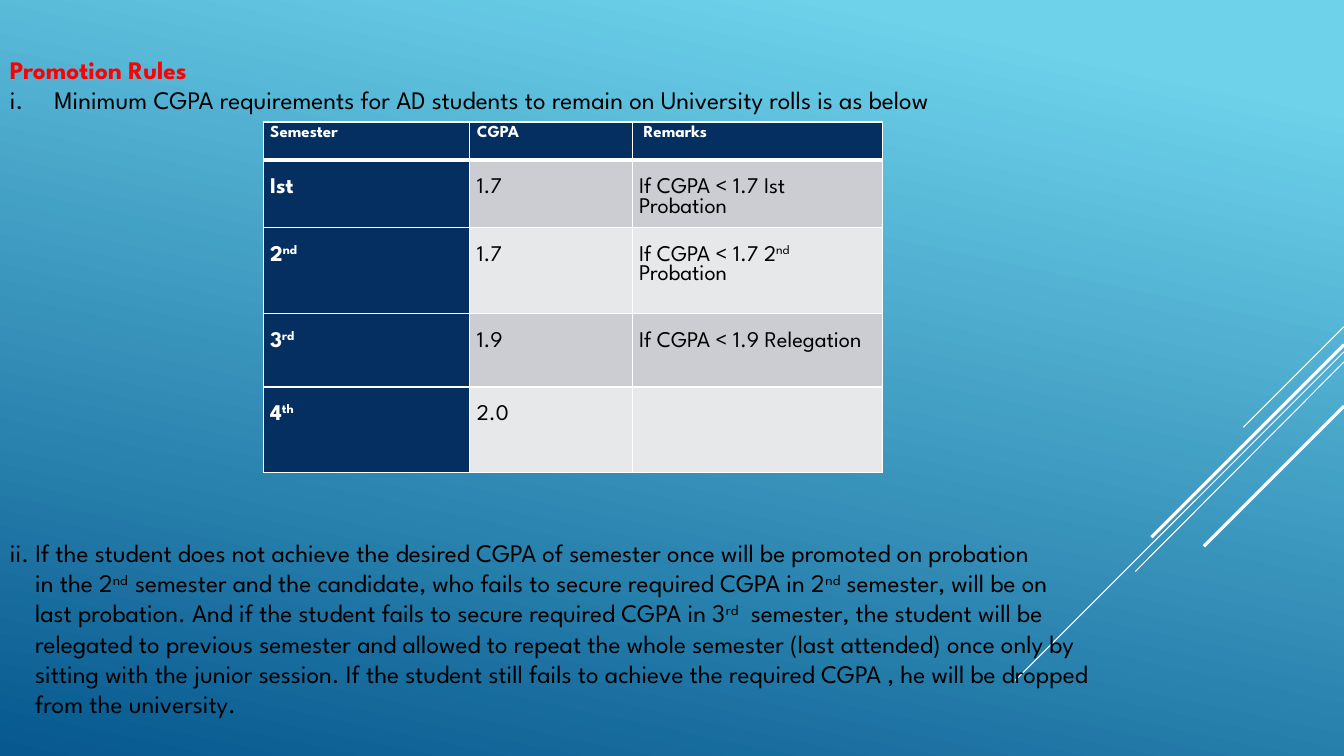
from dataclasses import dataclass

from lxml.etree import SubElement
from pptx import Presentation
from pptx.dml.color import RGBColor
from pptx.enum.shapes import MSO_CONNECTOR
from pptx.oxml import parse_xml
from pptx.oxml.ns import nsdecls, qn
from pptx.util import Inches, Pt

FONT = "League Spartan"
WHITE, BLACK, RED, NAVY = "FFFFFF", "000000", "FF0000", "052F61"
BAND_FILLS = ("CCCDD2", "E7E8EA")


@dataclass(frozen=True)
class Diagonal:
    start_y: float
    end_x: float
    end_y: float
    width: float


@dataclass(frozen=True)
class Line:
    text: str
    color: str = BLACK
    bold: bool = False
    margin: float = 0
    numbered: bool = False


@dataclass(frozen=True)
class TextBlock:
    top: float
    height: float
    lines: tuple[Line, ...]


DIAGONALS = (
    Diagonal(3.24, 12.33, 4.24, 0.75),
    Diagonal(3.49, 10.07, 6.75, 0.75),
    Diagonal(3.59, 11.26, 5.67, 0.75),
    Diagonal(3.42, 11.42, 5.33, 2.25),
    Diagonal(4.03, 11.94, 5.42, 2.25),
)

# Text between carets is superscript
RULE_TWO = (
    "in the 2^nd  ^semester and the candidate, who fails to secure required CGPA in 2^nd^ semester, will be on",
    "last probation. And if the student fails to secure required CGPA in 3^rd^  semester, the student will be",
    "relegated to previous semester and allowed to repeat the whole semester (last attended) once only by",
    "sitting with the junior session. If the student still fails to achieve the required CGPA , he will be dropped",
    "from the university.",
)
TEXT_BLOCKS = (
    TextBlock(0.49, 0.7, (
        Line("Promotion Rules", RED, bold=True),
        Line("Minimum CGPA requirements for AD students to remain on University rolls is as below",
             margin=0.44, numbered=True),
    )),
    TextBlock(5.28, 1.9, (
        Line("ii. If the student does not achieve the desired CGPA of semester once will be promoted on probation"),
        *(Line(text, margin=0.25) for text in RULE_TWO),
    )),
)

COLUMN_WIDTHS = (2.05, 1.61, 2.48)
ROW_HEIGHTS = (0.38, 0.67, 0.85, 0.73, 0.85)
PROMOTION_ROWS = (
    ("Semester", "CGPA", " Remarks"),
    ("Ist", "1.7", "If CGPA < 1.7 Ist Probation"),
    ("2^nd^", "1.7", "If CGPA < 1.7 2^nd ^Probation"),
    ("3^rd^", "1.9", "If CGPA < 1.9 Relegation"),
    ("4^th^", "2.0", ""),
)


def rgb(value: str) -> RGBColor:
    return RGBColor.from_string(value)


def add_runs(paragraph, text: str, size: float, color: str, bold: bool) -> None:
    for index, part in enumerate(text.split("^")):
        if not part:
            continue
        run = paragraph.add_run()
        run.text = part
        run.font.name = FONT
        run.font.size = Pt(size)
        run.font.bold = bold
        run.font.color.rgb = rgb(color)
        if index % 2:
            run._r.get_or_add_rPr().set("baseline", "30000")


def set_background(slide) -> None:
    fill = slide.background.fill
    fill.gradient()
    fill.gradient_angle = 258
    for stop, position, color in zip(fill.gradient_stops, (0.1, 1), ("6ED2EB", "06588E")):
        stop.position = position
        stop.color.rgb = rgb(color)


def add_diagonal(slide, diagonal: Diagonal) -> None:
    connector = slide.shapes.add_connector(
        MSO_CONNECTOR.STRAIGHT, Inches(13.33), Inches(diagonal.start_y),
        Inches(diagonal.end_x), Inches(diagonal.end_y))
    connector.line.color.rgb = rgb(WHITE)
    connector.line.width = Pt(diagonal.width)
    SubElement(connector._element.spPr, qn("a:effectLst"))


def add_text_block(slide, block: TextBlock) -> None:
    shape = slide.shapes.add_textbox(
        Inches(0), Inches(block.top), Inches(13.22), Inches(block.height))
    frame = shape.text_frame
    frame.word_wrap = True
    for index, line in enumerate(block.lines):
        paragraph = frame.add_paragraph() if index else frame.paragraphs[0]
        properties = paragraph._p.get_or_add_pPr()
        properties.set("marL", str(Inches(line.margin)))
        if line.numbered:
            properties.set("indent", str(-Inches(line.margin)))
            SubElement(properties, qn("a:buAutoNum"), type="romanLcPeriod")
        add_runs(paragraph, line.text, 18, line.color, line.bold)


def set_borders(cell, row: int) -> None:
    widths = {"L": 1, "R": 1, "T": 3 if row == 1 else 1, "B": 3 if row == 0 else 1}
    properties = cell._tc.get_or_add_tcPr()
    for index, (side, width) in enumerate(widths.items()):
        properties.insert(index, parse_xml(
            f'<a:ln{side} {nsdecls("a")} w="{Pt(width)}"><a:solidFill>'
            f'<a:srgbClr val="{WHITE}"/></a:solidFill></a:ln{side}>'))


def add_promotion_table(slide) -> None:
    table = slide.shapes.add_table(
        len(ROW_HEIGHTS), len(COLUMN_WIDTHS), Inches(2.61), Inches(1.21),
        Inches(sum(COLUMN_WIDTHS)), Inches(sum(ROW_HEIGHTS))).table
    table.first_row = table.horz_banding = False
    for column, width in zip(table.columns, COLUMN_WIDTHS):
        column.width = Inches(width)
    for row, (height, texts) in enumerate(zip(ROW_HEIGHTS, PROMOTION_ROWS)):
        table.rows[row].height = Inches(height)
        for column, text in enumerate(texts):
            is_header = row == 0 or column == 0
            cell = table.cell(row, column)
            cell.margin_left = cell.margin_right = Inches(0.07)
            cell.margin_top = Inches(0.19 if row else 0)
            cell.margin_bottom = Inches(0)
            cell.fill.solid()
            cell.fill.fore_color.rgb = rgb(NAVY if is_header else BAND_FILLS[(row - 1) % 2])
            set_borders(cell, row)
            paragraph = cell.text_frame.paragraphs[0]
            paragraph.line_spacing = Pt(13.8)
            add_runs(paragraph, text, 16 if row else 12, WHITE if is_header else BLACK, is_header)


def main() -> None:
    presentation = Presentation()
    presentation.slide_width = Inches(13.33)
    presentation.slide_height = Inches(7.5)
    slide = presentation.slides.add_slide(presentation.slide_layouts[6])

    # Background and diagonal lines
    set_background(slide)
    for diagonal in DIAGONALS:
        add_diagonal(slide, diagonal)

    # Rules and CGPA table
    for block in TEXT_BLOCKS:
        add_text_block(slide, block)
    add_promotion_table(slide)

    presentation.save("out.pptx")


if __name__ == "__main__":
    main()
